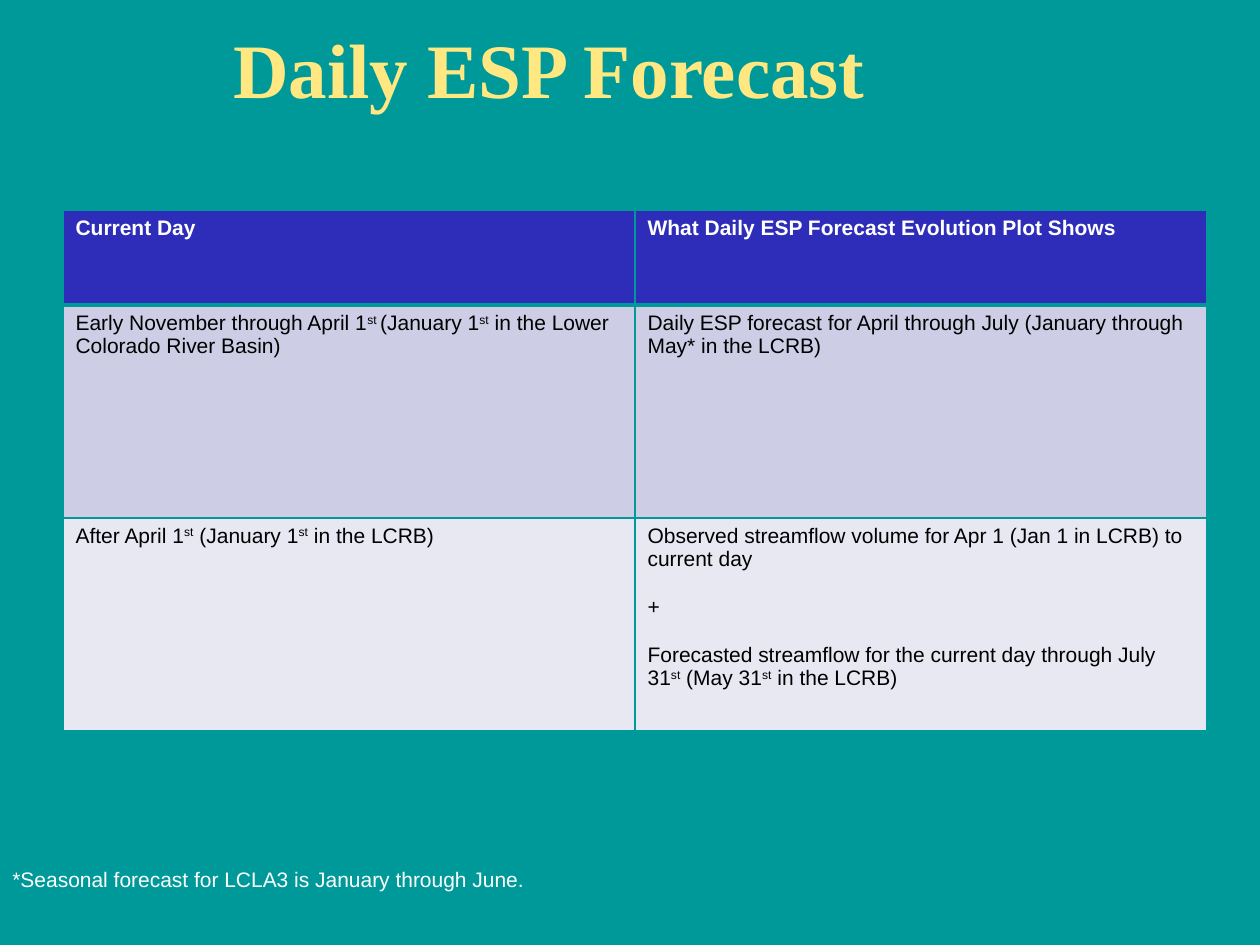
from pptx import Presentation
from pptx.dml.color import RGBColor
from pptx.enum.text import MSO_ANCHOR, PP_ALIGN
from pptx.oxml import parse_xml
from pptx.oxml.ns import nsdecls
from pptx.util import Pt

TEAL = RGBColor(0x00, 0x99, 0x99)
YELLOW = RGBColor(0xFF, 0xE8, 0x81)
WHITE = RGBColor(0xFF, 0xFF, 0xFF)
BLACK = RGBColor(0x00, 0x00, 0x00)
BLUE = RGBColor(0x2D, 0x2D, 0xB9)
LAVENDER = RGBColor(0xCD, 0xCD, 0xE6)
PALE = RGBColor(0xE8, 0xE8, 0xF3)

# Content: each cell is a list of paragraphs; text between ^ marks is superscript
TITLE = "Daily ESP Forecast"
FORECAST_ROWS = [
    (["Current Day"], ["What Daily ESP Forecast Evolution Plot Shows"]),
    (["Early November through April 1^st ^(January 1^st^ in the Lower Colorado River Basin)"],
     ["Daily ESP forecast for April through July (January through May* in the LCRB)"]),
    (["After April 1^st^ (January 1^st^ in the LCRB)"],
     ["Observed streamflow volume for Apr 1 (Jan 1 in LCRB) to current day",
      "+",
      "Forecasted streamflow for the current day through July 31^st^ (May 31^st^ in the LCRB)"]),
]
FOOTNOTE = "*Seasonal forecast for LCLA3 is January through June."

ROW_HEIGHTS = [54, 121.68, 121.68]
ROW_FILLS = [BLUE, LAVENDER, PALE]
COLUMN_WIDTH = 326.88
HEADER_RULE = 3
THIN_RULE = 1


def style(paragraph, size, name, color, bold=False):
    font = paragraph.font
    font.size, font.name, font.bold = Pt(size), name, bold
    font.color.rgb = color


def write_cell(cell, lines, color, bold):
    frame = cell.text_frame
    for number, line in enumerate(lines):
        paragraph = frame.add_paragraph() if number else frame.paragraphs[0]
        paragraph.alignment = PP_ALIGN.LEFT
        if number:
            paragraph.space_before = Pt(13.8)
        style(paragraph, 12, "Arial", color, bold)
        for part, text in enumerate(line.split("^")):
            run = paragraph.add_run()
            run.text = text
            if part % 2:
                run.font._element.set("baseline", "30000")


def set_borders(cell, top, bottom):
    widths = {"lnL": THIN_RULE, "lnR": THIN_RULE, "lnT": top, "lnB": bottom}
    properties = cell._tc.get_or_add_tcPr()
    for position, (side, width) in enumerate(widths.items()):
        properties.insert(position, parse_xml(
            f'<a:{side} {nsdecls("a")} w="{Pt(width)}"><a:solidFill>'
            f'<a:srgbClr val="{TEAL}"/></a:solidFill></a:{side}>'))


deck = Presentation()
deck.slide_width, deck.slide_height = Pt(720), Pt(540)
slide = deck.slides.add_slide(deck.slide_layouts[5])
slide.background.fill.solid()
slide.background.fill.fore_color.rgb = TEAL

# Title
title = slide.shapes.title
title.left, title.top, title.width, title.height = Pt(126), Pt(12.24), Pt(527.76), Pt(41.76)
title.text_frame.text = TITLE
title.text_frame.vertical_anchor = MSO_ANCHOR.TOP
title.text_frame.margin_top, title.text_frame.margin_bottom = Pt(8), Pt(0)
heading = title.text_frame.paragraphs[0]
heading.alignment = PP_ALIGN.LEFT
heading.line_spacing = 0.85
style(heading, 44, "Times New Roman", YELLOW, True)

# Forecast table
forecast = slide.shapes.add_table(
    len(FORECAST_ROWS), 2, Pt(36), Pt(120.24), Pt(2 * COLUMN_WIDTH), Pt(sum(ROW_HEIGHTS))).table
for column in forecast.columns:
    column.width = Pt(COLUMN_WIDTH)
for r, (row, height, fill) in enumerate(zip(FORECAST_ROWS, ROW_HEIGHTS, ROW_FILLS)):
    forecast.rows[r].height = Pt(height)
    is_header = r == 0
    for c, lines in enumerate(row):
        cell = forecast.cell(r, c)
        cell.fill.solid()
        cell.fill.fore_color.rgb = fill
        write_cell(cell, lines, WHITE if is_header else BLACK, is_header)
        set_borders(cell, HEADER_RULE if r == 1 else THIN_RULE,
                    HEADER_RULE if is_header else THIN_RULE)

# Footnote
footnote = slide.shapes.add_textbox(Pt(0), Pt(491.76), Pt(312.48), Pt(21.6)).text_frame
footnote.word_wrap = False
footnote.text = FOOTNOTE
footnote.paragraphs[0].alignment = PP_ALIGN.LEFT
style(footnote.paragraphs[0], 12, "Arial", WHITE)

deck.save("out.pptx")
